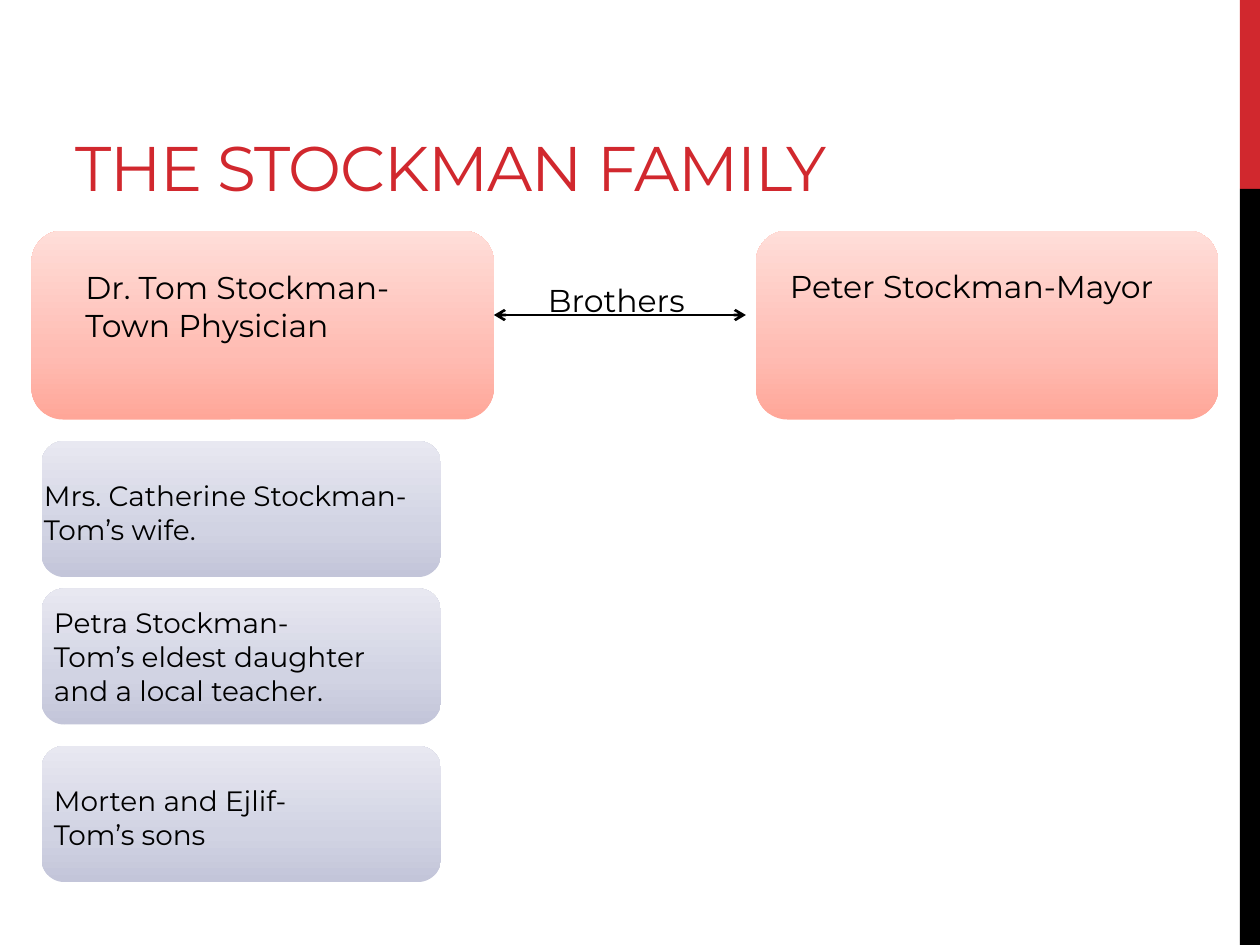
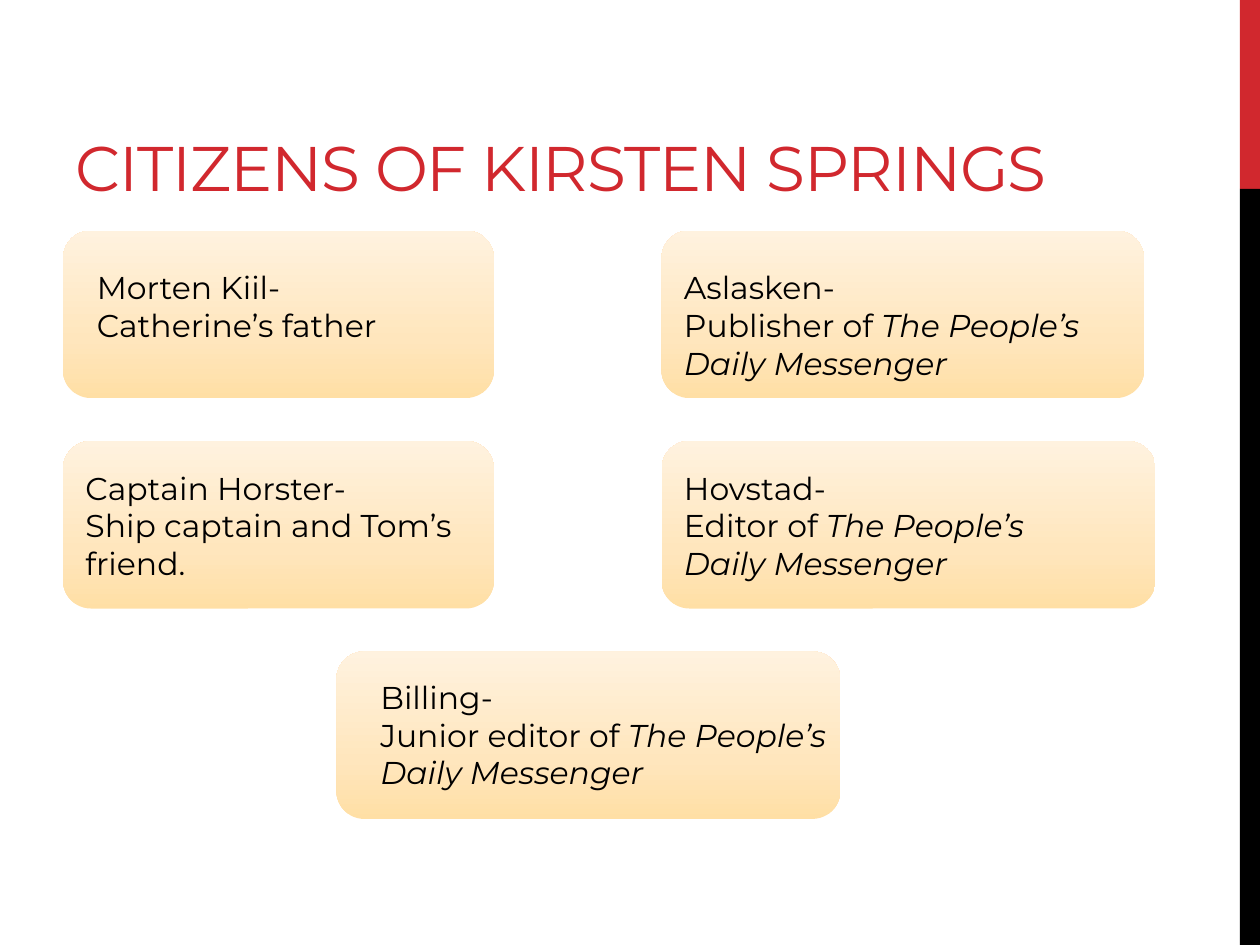
from copy import deepcopy

from pptx import Presentation
from pptx.dml.color import RGBColor
from pptx.enum.shapes import MSO_CONNECTOR, MSO_SHAPE
from pptx.enum.text import MSO_ANCHOR
from pptx.oxml.ns import qn
from pptx.oxml.xmlchemy import OxmlElement
from pptx.util import Inches, Pt

RECT = MSO_SHAPE.RECTANGLE
ROUNDED = MSO_SHAPE.ROUNDED_RECTANGLE
STRAIGHT = MSO_CONNECTOR.STRAIGHT
TOP, BOTTOM = MSO_ANCHOR.TOP, MSO_ANCHOR.BOTTOM

FONT = "Montserrat"
COLORS = {"red": "D1282E", "black": "000000"}
# Gradient stops run from the bottom of a card to its top
GRADIENTS = {
    "brother": ("FFA698", "FFBCB3", "FFDED9"),
    "household": ("C3C5D9", "D1D3E3", "E8E8F1"),
    "citizen": ("FFDFA5", "FFE6BD", "FFF2DF"),
}
STOPS = (0, 0.35, 1)


def rgb(name):
    return RGBColor.from_string(COLORS[name])


def add_text(slide, text, x, y, w, h, size=18, color="black", anchor=TOP, spacing=None):
    """Each line is a paragraph; words between asterisks are italic."""
    tf = slide.shapes.add_textbox(Inches(x), Inches(y), Inches(w), Inches(h)).text_frame
    tf.word_wrap = True
    tf.vertical_anchor = anchor
    for i, line in enumerate(text.split("\n")):
        p = tf.add_paragraph() if i else tf.paragraphs[0]
        for j, part in enumerate(line.split("*")):
            if not part:
                continue
            r = p.add_run()
            r.text = part
            r.font.name = FONT
            r.font.size = Pt(size)
            r.font.color.rgb = rgb(color)
            if j % 2:
                r.font.italic = True
            if spacing is not None:
                r.font._element.set("spc", str(round(spacing * 100)))


def add_block(slide, shape, x, y, w, h):
    s = slide.shapes.add_shape(shape, Inches(x), Inches(y), Inches(w), Inches(h))
    s.shadow.inherit = False
    s.line.fill.background()
    return s


def add_card(slide, group, x, y, w, h):
    s = add_block(slide, ROUNDED, x, y, w, h)
    s.fill.gradient()
    s.fill.gradient_angle = 90
    stops = s._element.spPr.find(qn("a:gradFill")).find(qn("a:gsLst"))
    stops.insert(1, deepcopy(stops[0]))
    for stop, position, color in zip(s.fill.gradient_stops, STOPS, GRADIENTS[group]):
        stop.position = position
        stop.color.rgb = RGBColor.from_string(color)


def add_double_arrow(slide, x1, x2, y):
    s = slide.shapes.add_connector(STRAIGHT, Inches(x1), Inches(y), Inches(x2), Inches(y))
    s.line.color.rgb = rgb("black")
    s.line.width = Pt(1.5)
    for tag in ("a:headEnd", "a:tailEnd"):
        end = OxmlElement(tag)
        end.set("type", "arrow")
        s.line._get_or_add_ln().append(end)
    s._element.spPr.append(OxmlElement("a:effectLst"))


def add_slide(prs, title):
    """Blank slide with the side band and the title."""
    slide = prs.slides.add_slide(prs.slide_layouts[6])
    for color, y, h in (("red", 0, 1.5), ("black", 1.5, 6)):
        s = add_block(slide, RECT, 9.84, y, 0.16, h)
        s.fill.solid()
        s.fill.fore_color.rgb = rgb(color)
    add_text(slide, title, 0.5, 0.17, 9.25, 1.5, size=36, color="red",
             anchor=BOTTOM, spacing=-0.6)
    return slide


def build_family(prs):
    slide = add_slide(prs, "THE STOCKMAN FAMILY")

    # The two brothers: card left, text left, text top
    brothers = [
        ("Dr. Tom Stockman-\nTown Physician", 0.25, 0.58, 2.08),
        ("Peter Stockman-Mayor", 6, 6.17, 2.07),
    ]
    for text, x, text_x, text_y in brothers:
        add_card(slide, "brother", x, 1.83, 3.67, 1.5)
        add_text(slide, text, text_x, text_y, 3.25, 0.71)
    add_double_arrow(slide, 3.92, 5.92, 2.5)
    add_text(slide, "Brothers", 4.25, 2.18, 2.08, 0.4)

    # Tom's household: card top, text left, text top, text height
    household = [
        ("Mrs. Catherine Stockman-\nTom’s wife.", 3.5, 0.25, 3.75, 0.64),
        ("Petra Stockman-\nTom’s eldest daughter\nand a local teacher.", 4.67, 0.33, 4.76, 0.91),
        ("Morten and Ejlif-\nTom’s sons", 5.92, 0.33, 6.17, 0.64),
    ]
    for text, y, text_x, text_y, text_h in household:
        add_card(slide, "household", 0.33, y, 3.17, 1.08)
        add_text(slide, text, text_x, text_y, 3.58, text_h, size=16)


def build_citizens(prs):
    slide = add_slide(prs, "CITIZENS OF KIRSTEN SPRINGS")
    paper = "*The People’s Daily Messenger*"

    # Card left, top, width; text left, top, width
    citizens = [
        ("Morten Kiil-\nCatherine’s father", 0.5, 1.83, 3.42, 0.67, 2.08, 2.67),
        (f"Aslasken-\nPublisher of {paper}", 5.25, 1.83, 3.83, 5.33, 2.08, 3.75),
        ("Captain Horster-\nShip captain and Tom’s friend.", 0.5, 3.5, 3.42, 0.58, 3.67, 3.33),
        (f"Hovstad-\nEditor of {paper}", 5.25, 3.5, 3.92, 5.33, 3.67, 3.33),
        (f"Billing-\nJunior editor of {paper}", 2.67, 5.17, 4, 2.92, 5.33, 4),
    ]
    for text, x, y, w, text_x, text_y, text_w in citizens:
        add_card(slide, "citizen", x, y, w, 1.33)
        add_text(slide, text, text_x, text_y, text_w, 1.01)


def main():
    prs = Presentation()
    prs.slide_width, prs.slide_height = Inches(10), Inches(7.5)
    build_family(prs)
    build_citizens(prs)
    prs.save("out.pptx")


if __name__ == "__main__":
    main()
